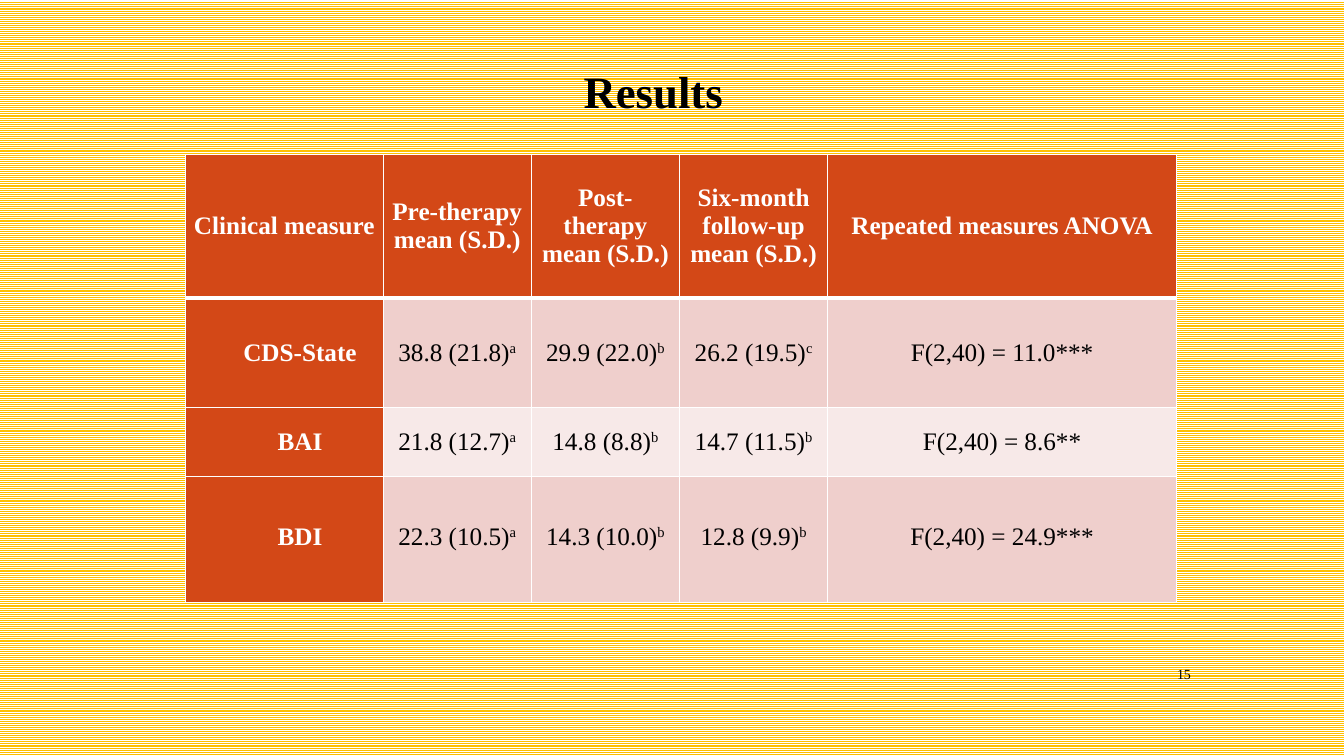
import pptx
import pptx.util
import pptx.dml.color
import pptx.enum.dml
import pptx.enum.text
import pptx.oxml
import pptx.oxml.ns

Inches = pptx.util.Inches
Pt = pptx.util.Pt
ANCHOR = pptx.enum.text.MSO_ANCHOR
ALIGN = pptx.enum.text.PP_ALIGN

WIDTH, HEIGHT = 13.33, 7.5
FONT = "Times New Roman"
COLORS = {
    "gold": "FFC000",
    "white": "FFFFFF",
    "black": "000000",
    "header": "D34817",
    "odd": "EFCFCC",
    "even": "F7E9E8",
}
COLUMNS = [1.96, 1.47, 1.47, 1.47, 3.46]
ROWS = [1.43, 1.08, 0.69, 1.25]
HEADINGS = [
    "Clinical measure",
    "Pre-therapy mean (S.D.)",
    "Post-therapy mean (S.D.)",
    "Six-month follow-up mean (S.D.)",
    "Repeated measures ANOVA",
]
MEASURES = [
    ["CDS-State", "38.8 (21.8)^a", "29.9 (22.0)^b", "26.2 (19.5)^c", "F(2,40) = 11.0***"],
    ["BAI", "21.8 (12.7)^a", "14.8 (8.8)^b", "14.7 (11.5)^b", "F(2,40) = 8.6**"],
    ["BDI", "22.3 (10.5)^a", "14.3 (10.0)^b", "12.8 (9.9)^b", "F(2,40) = 24.9***"],
]


def rgb(name):
    return pptx.dml.color.RGBColor.from_string(COLORS[name])


def add_run(p, text, size, color="black", bold=False):
    r = p.add_run()
    r.text = text
    r.font.name = FONT
    r.font.size = Pt(size)
    r.font.bold = bold
    r.font.color.rgb = rgb(color)
    return r


def add_label(s, box, text, size, align, anchor, bold=False, bottom=0.05):
    sp = s.shapes.add_textbox(*map(Inches, box))
    tf = sp.text_frame
    tf.word_wrap = True
    tf.vertical_anchor = anchor
    tf.margin_bottom = Inches(bottom)
    p = tf.paragraphs[0]
    p.alignment = align
    add_run(p, text, size, bold=bold)


def set_borders(cell, top, bottom):
    tcPr = cell._tc.get_or_add_tcPr()
    sides = [("lnL", 1), ("lnR", 1), ("lnT", top), ("lnB", bottom)]
    for i, (side, width) in enumerate(sides):
        tcPr.insert(i, pptx.oxml.parse_xml(
            f'<a:{side} {pptx.oxml.ns.nsdecls("a")} w="{Pt(width)}">'
            f'<a:solidFill><a:srgbClr val="{COLORS["white"]}"/></a:solidFill>'
            f'</a:{side}>'))


def fill_cell(cell, text, row, col):
    heading = row == 0 or col == 0
    cell.fill.solid()
    cell.fill.fore_color.rgb = rgb("header" if heading else "odd" if row % 2 else "even")
    set_borders(cell, 3 if row == 1 else 1, 3 if row == 0 else 1)
    cell.vertical_anchor = ANCHOR.MIDDLE
    indent = 0.31 if row and col == 0 else 0
    cell.margin_left = Inches(0.07 + indent)
    cell.margin_right = Inches(0.07)
    cell.margin_top = 0
    cell.margin_bottom = Inches(0.06 if row == len(ROWS) - 1 else 0)
    p = cell.text_frame.paragraphs[0]
    p.alignment = ALIGN.CENTER
    value, _, mark = text.partition("^")
    add_run(p, value, 18, "white" if heading else "black", heading)
    if mark:
        r = add_run(p, mark, 18)
        r._r.get_or_add_rPr().set("baseline", "30000")


def add_results_table(s, box):
    left, top, width, height = box
    data = [HEADINGS] + MEASURES
    table = s.shapes.add_table(len(ROWS), len(COLUMNS), *map(Inches, box)).table
    table.first_row = table.horz_banding = False
    for column, share in zip(table.columns, COLUMNS):
        column.width = Inches(width * share / sum(COLUMNS))
    for row, share in zip(table.rows, ROWS):
        row.height = Inches(height * share / sum(ROWS))
    for i, values in enumerate(data):
        for j, text in enumerate(values):
            fill_cell(table.cell(i, j), text, i, j)


def add_background(s):
    fill = s.background.fill
    fill.patterned()
    fill.pattern = pptx.enum.dml.MSO_PATTERN.LIGHT_HORIZONTAL
    fill.fore_color.rgb = rgb("gold")
    fill.back_color.rgb = rgb("white")


def add_results_slide(prs):
    s = prs.slides.add_slide(prs.slide_layouts[6])
    add_background(s)
    add_label(s, (2.58, 0.15, 7.8, 1.04), "Results", 32,
              ALIGN.CENTER, ANCHOR.BOTTOM, bold=True, bottom=0.02)
    add_results_table(s, (1.84, 1.53, 9.83, 4.45))
    add_label(s, (11.32, 6.53, 0.59, 0.31), "15", 10, ALIGN.RIGHT, ANCHOR.MIDDLE)


def main():
    prs = pptx.Presentation()
    prs.slide_width = Inches(WIDTH)
    prs.slide_height = Inches(HEIGHT)
    add_results_slide(prs)
    prs.save("out.pptx")


if __name__ == "__main__":
    main()
